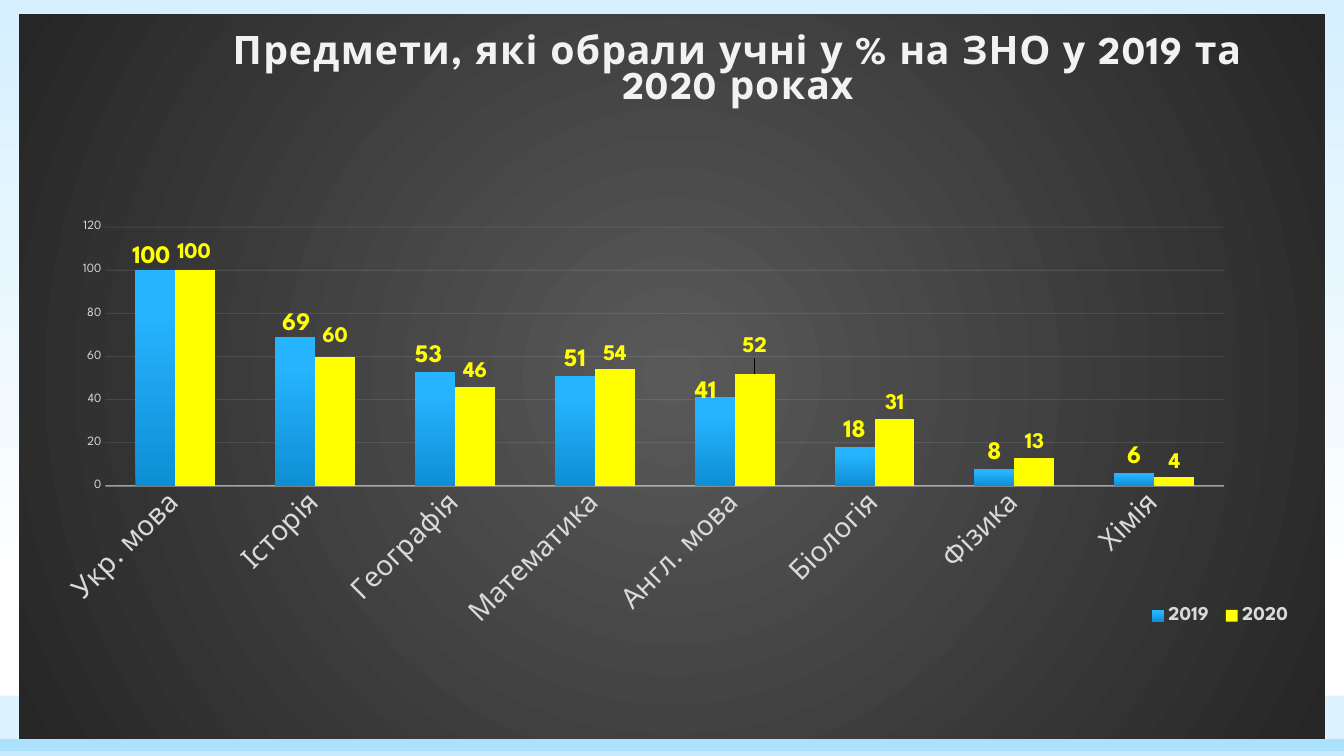
from lxml import etree
from pptx import Presentation
from pptx.chart.data import CategoryChartData
from pptx.dml.color import RGBColor
from pptx.enum.chart import (XL_CHART_TYPE as CHART, XL_LABEL_POSITION as LABEL,
                             XL_LEGEND_POSITION as LEGEND, XL_TICK_MARK as TICK)
from pptx.enum.shapes import MSO_SHAPE as SHAPE
from pptx.oxml import parse_xml
from pptx.oxml.ns import nsdecls, qn
from pptx.util import Inches, Pt

FONT = "League Spartan"


def solid(fill, color, alpha=None):
    fill.solid()
    fill.fore_color.rgb = RGBColor.from_string(color)
    if alpha is not None:
        clr = fill._xPr.find(".//" + qn("a:srgbClr"))
        etree.SubElement(clr, qn("a:alpha"), val=str(alpha * 1000))


def gradient(fill, stops, direction):
    fill.solid()
    gs = "".join(f'<a:gs pos="{pos * 1000}"><a:srgbClr val="{color}"/></a:gs>'
                 for pos, color in stops)
    grad = parse_xml(f'<a:gradFill {nsdecls("a")} rotWithShape="1">'
                     f'<a:gsLst>{gs}</a:gsLst>{direction}</a:gradFill>')
    fill._xPr.replace(fill._xPr.find(qn("a:solidFill")), grad)


prs = Presentation()
prs.slide_width, prs.slide_height = Inches(13.33), Inches(7.5)
slide = prs.slides.add_slide(prs.slide_layouts[6])

# Background and bottom bands
gradient(slide.background.fill, [(0, "D6F0FF"), (79, "FFFFFF"), (100, "FFFFFF")],
         '<a:lin ang="5400000" scaled="0"/>')
for top, height, alpha in [(6.9, 0.55, 17), (7.33, 0.17, 28)]:
    sp = slide.shapes.add_shape(SHAPE.RECTANGLE, 0, Inches(top),
                                prs.slide_width, Inches(height))
    sp.shadow.inherit = False
    sp.line.fill.background()
    solid(sp.fill, "31B6FD", alpha)

# Chart data
data = CategoryChartData(number_format="0")
data.categories = ["Укр. мова", "Історія", "Географія", "Математика",
                   "Англ. мова", "Біологія", "Фізика", "Хімія"]
data.add_series("2019", [100, 69, 53, 51, 41, 18, 8, 6])
data.add_series("2020", [100, 60, 46, 54, 52, 31, 13, 4])
chart = slide.shapes.add_chart(CHART.COLUMN_CLUSTERED, Inches(0.19), Inches(0.14),
                               Inches(12.95), Inches(7.19), data).chart
chart.font.name, chart.font.size = FONT, Pt(10)

# Dark radial chart area
area = parse_xml(f'<c:spPr {nsdecls("c", "a")}><a:solidFill/><a:ln><a:noFill/></a:ln></c:spPr>')
chart._chartSpace.find(qn("c:chart")).addnext(area)
plot = chart.plots[0]
area_fill = type(plot.series[0].format.fill).from_fill_parent(area)
gradient(area_fill, [(0, "595959"), (100, "262626")],
         '<a:path path="circle"><a:fillToRect l="50000" t="50000" r="50000" b="50000"/></a:path>')

# Title
tf = chart.chart_title.text_frame
p = tf.paragraphs[0]
r = p.add_run()
r.text = "Предмети, які обрали учні у % на ЗНО у 2019 та 2020 роках"
r.font.name, r.font.size, r.font.bold = FONT, Pt(28), True
solid(r.font.fill, "F2F2F2")
r.font._element.set("spc", "100")
chart.chart_title.include_in_layout = False

# Legend
chart.has_legend = True
legend = chart.legend
legend.position, legend.include_in_layout = LEGEND.RIGHT, False
legend.font.name, legend.font.size, legend.font.bold = FONT, Pt(14), True
solid(legend.font.fill, "D9D9D9")

# Axes
cat, val = chart.category_axis, chart.value_axis
for axis, size in [(cat, 20), (val, 9)]:
    axis.major_tick_mark = axis.minor_tick_mark = TICK.NONE
    font = axis.tick_labels.font
    font.name, font.size = FONT, Pt(size)
    solid(font.fill, "D9D9D9")
cat._element.find(qn("c:txPr")).find(qn("a:bodyPr")).set("rot", "-2700000")
cat.format.line.width = Pt(1)
solid(cat.format.line.fill, "F2F2F2", 54)
val.minimum_scale, val.maximum_scale, val.major_unit = 0, 120, 20
val.format.line.fill.background()
grid = val.major_gridlines.format.line
grid.width = Pt(0.75)
solid(grid.fill, "F2F2F2", 10)

# Manual places, as shares of the chart
plot_area = chart._chartSpace.find(".//" + qn("c:plotArea"))
for old in plot_area.findall(qn("c:layout")):
    plot_area.remove(old)
places = [(plot_area, 0, "inner", {"x": 0.066, "y": 0.294, "w": 0.857, "h": 0.357}),
          (legend._element, 1, None, {"x": 0.86, "y": 0.81, "w": 0.12, "h": 0.04}),
          (chart.chart_title._element, 1, None, {"x": 0.158, "y": 0.015})]

# Series and labels; nudges move single labels
plot.gap_width, plot.overlap, plot.vary_by_categories = 150, 0, False
styles = [(18, {0: (-0.003, 0.003), 1: (0.001, 0.003), 2: (-0.005, 0), 4: (-0.007, 0.014)}),
          (16, {0: (-0.001, -0.004), 1: (0, -0.007), 4: (0, -0.016)})]
for s, (size, nudges) in zip(plot.series, styles):
    labels = s.data_labels
    labels.show_value, labels.number_format = True, "0"
    labels.number_format_is_linked = False
    points = {i: s.points[i].data_label for i in nudges}
    for label in [labels, *points.values()]:
        label.position = LABEL.OUTSIDE_END
        font = label.font
        font.name, font.size, font.bold = FONT, Pt(size), True
        solid(font.fill, "FFFF00")
    for d_lbl in labels._element.findall(qn("c:dLbl")):
        x, y = nudges[int(d_lbl.find(qn("c:idx")).get("val"))]
        places.append((d_lbl, 1, None, {"x": x, "y": y}))
gradient(plot.series[0].format.fill, [(0, "0E8FD4"), (80, "26B3FF"), (100, "27B4FF")],
         '<a:lin ang="16200000" scaled="0"/>')
solid(plot.series[1].format.fill, "FFFF00")

# Write the places
for parent, index, target, box in places:
    for old in parent.findall(qn("c:layout")):
        parent.remove(old)
    layout = etree.Element(qn("c:layout"))
    manual = etree.SubElement(layout, qn("c:manualLayout"))
    if target:
        etree.SubElement(manual, qn("c:layoutTarget"), val=target)
    if parent.tag != qn("c:dLbl"):
        for mode in ("xMode", "yMode"):
            etree.SubElement(manual, qn("c:" + mode), val="edge")
    for key, share in box.items():
        etree.SubElement(manual, qn("c:" + key), val=str(share))
    parent.insert(index, layout)

prs.save("out.pptx")
